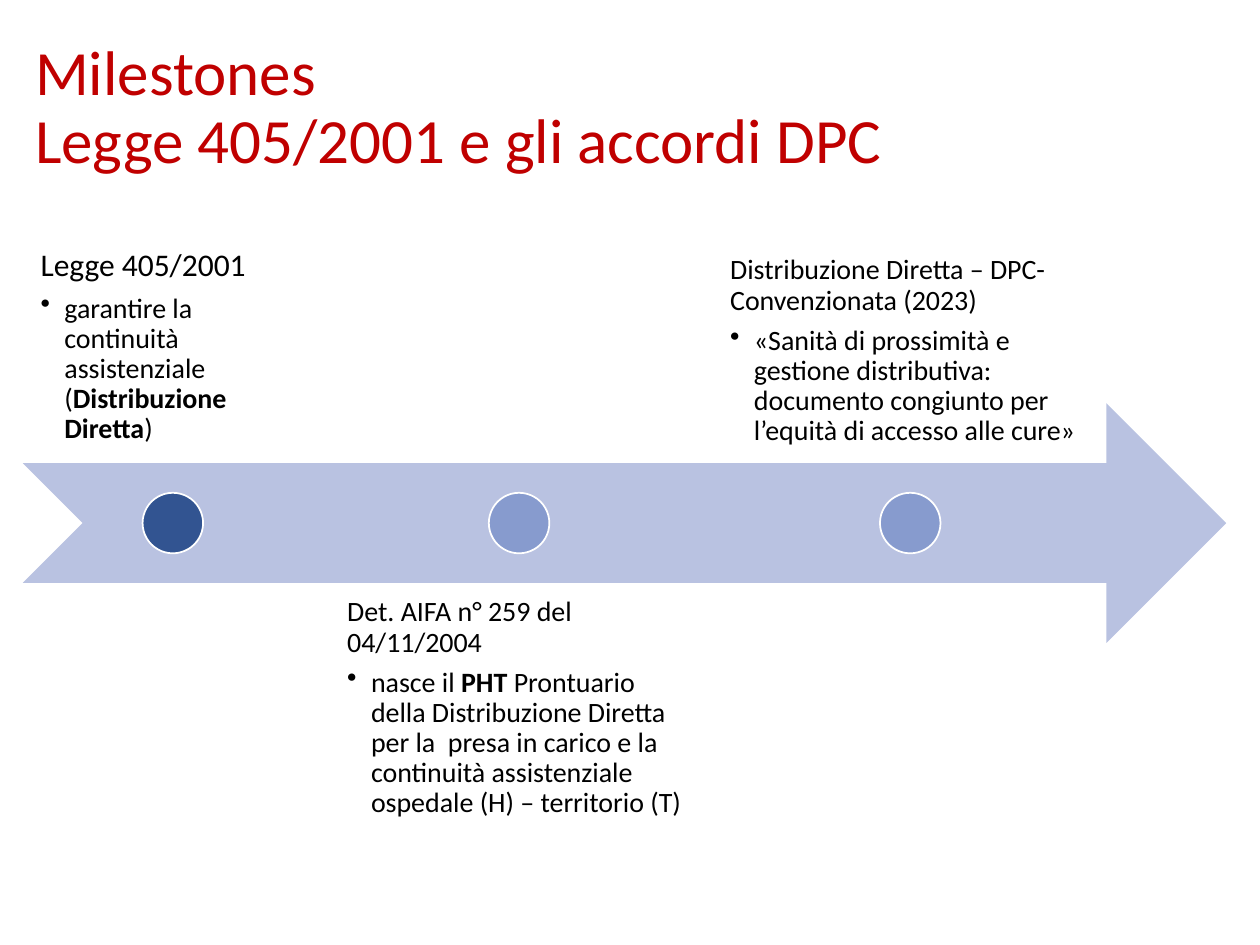
"""Build a timeline slide on Legge 405/2001 and the DPC agreements."""
from dataclasses import dataclass

from lxml import etree
from pptx import Presentation
from pptx.dml.color import RGBColor
from pptx.enum.shapes import MSO_SHAPE
from pptx.enum.text import MSO_ANCHOR
from pptx.oxml.ns import qn
from pptx.util import Cm, Pt

NOTCHED_ARROW = MSO_SHAPE.NOTCHED_RIGHT_ARROW
OVAL = MSO_SHAPE.OVAL
TOP, MIDDLE, BOTTOM = MSO_ANCHOR.TOP, MSO_ANCHOR.MIDDLE, MSO_ANCHOR.BOTTOM


@dataclass(frozen=True)
class Theme:
    font: str = "Calibri"
    title_size: float = 36
    lead_size: float = 18
    body_size: float = 16
    title: str = "C00000"
    text: str = "000000"
    arrow: str = "B9C2E1"
    first_dot: str = "325491"
    dot: str = "879BCE"
    outline: str = "FFFFFF"


@dataclass(frozen=True)
class Milestone:
    left: float
    width: float
    heading: str
    heading_size: float
    detail: tuple
    inset: float
    above: bool
    color: str


THEME = Theme()
MARGIN = 0.46
ARROW_TOP = 8.13
ARROW_WIDTH = 24.26
BAND_HEIGHT = 4.83
ABOVE_TOP = 4.5
BELOW_TOP = 11.73
DOT_SIZE = 1.22
BULLET_INDENT = 0.48

MILESTONES = (
    Milestone(MARGIN, 6.05, "Legge 405/2001", THEME.lead_size,
              (("garantire la continuità assistenziale (", False),
               ("Distribuzione Diretta", True), (")", False)),
              0.36, True, THEME.first_dot),
    Milestone(6.68, 7.57, "Det. AIFA n° 259 del 04/11/2004", THEME.body_size,
              (("nasce il ", False), ("PHT", True),
               (" Prontuario della Distribuzione Diretta per la  presa in carico e la "
                "continuità assistenziale ospedale (H) – territorio (T)", False)),
              0.32, False, THEME.dot),
    Milestone(14.4, 7.9, "Distribuzione Diretta – DPC-Convenzionata (2023)",
              THEME.body_size,
              (("«Sanità di prossimità e gestione distributiva: documento congiunto "
                "per l’equità di accesso alle cure»", False),),
              0.32, True, THEME.dot),
)


def add_frame(slide, left, top, width, height, anchor):
    """Add a wrapping text box and return its text frame."""
    box = slide.shapes.add_textbox(Cm(left), Cm(top), Cm(width), Cm(height))
    frame = box.text_frame
    frame.word_wrap = True
    frame.vertical_anchor = anchor
    return frame


def style_paragraph(paragraph, size, color, space_share=0):
    """Apply spacing and font to a paragraph and its runs."""
    paragraph.line_spacing = 0.9
    paragraph.space_after = Pt(round(size * space_share, 1))
    for font in (paragraph.font, *(run.font for run in paragraph.runs)):
        font.name = THEME.font
        font.size = Pt(size)
        font.color.rgb = RGBColor.from_string(color)


def add_bullet(paragraph):
    """Give a paragraph a hanging round bullet."""
    properties = paragraph._p.get_or_add_pPr()
    properties.set("marL", str(Cm(BULLET_INDENT)))
    properties.set("indent", str(-Cm(BULLET_INDENT)))
    etree.SubElement(properties, qn("a:buChar")).set("char", "•")


def add_title(slide, lines):
    """Add the slide title, one paragraph per line."""
    frame = add_frame(slide, MARGIN, 0.36, 21.89, 3.68, MIDDLE)
    frame.text = "\n".join(lines)
    for paragraph in frame.paragraphs:
        style_paragraph(paragraph, THEME.title_size, THEME.title)


def add_solid(slide, preset, left, top, width, height, color):
    """Add a filled preset shape without shadow or line."""
    solid = slide.shapes.add_shape(preset, Cm(left), Cm(top), Cm(width), Cm(height))
    solid.shadow.inherit = False
    solid.fill.solid()
    solid.fill.fore_color.rgb = RGBColor.from_string(color)
    solid.line.fill.background()
    return solid


def add_milestone(slide, milestone):
    """Add a milestone's text and its dot centred on the arrow."""
    top, anchor = (ABOVE_TOP, BOTTOM) if milestone.above else (BELOW_TOP, TOP)
    frame = add_frame(slide, milestone.left, top, milestone.width, BAND_HEIGHT, anchor)
    frame.margin_left = frame.margin_right = Cm(milestone.inset)
    frame.margin_top = frame.margin_bottom = Cm(milestone.inset)
    heading = frame.paragraphs[0]
    heading.text = milestone.heading
    style_paragraph(heading, milestone.heading_size, THEME.text, 0.35)

    detail = frame.add_paragraph()
    detail.level = 1
    add_bullet(detail)
    for words, bold in milestone.detail:
        run = detail.add_run()
        run.text = words
        run.font.bold = bold
    style_paragraph(detail, THEME.body_size, THEME.text, 0.15)

    dot_left = milestone.left + (milestone.width - DOT_SIZE) / 2
    dot_top = ARROW_TOP + (BAND_HEIGHT - DOT_SIZE) / 2
    dot = add_solid(slide, OVAL, dot_left, dot_top, DOT_SIZE, DOT_SIZE, milestone.color)
    dot.line.color.rgb = RGBColor.from_string(THEME.outline)
    dot.line.width = Pt(1)


def main():
    """Build and save the slide."""
    deck = Presentation()
    deck.slide_width, deck.slide_height = Cm(25.4), Cm(19.05)
    slide = deck.slides.add_slide(deck.slide_layouts[6])
    add_title(slide, ("Milestones", "Legge 405/2001 e gli accordi DPC"))
    add_solid(slide, NOTCHED_ARROW, MARGIN, ARROW_TOP, ARROW_WIDTH, BAND_HEIGHT,
              THEME.arrow)
    for milestone in MILESTONES:
        add_milestone(slide, milestone)
    deck.save("out.pptx")


if __name__ == "__main__":
    main()
